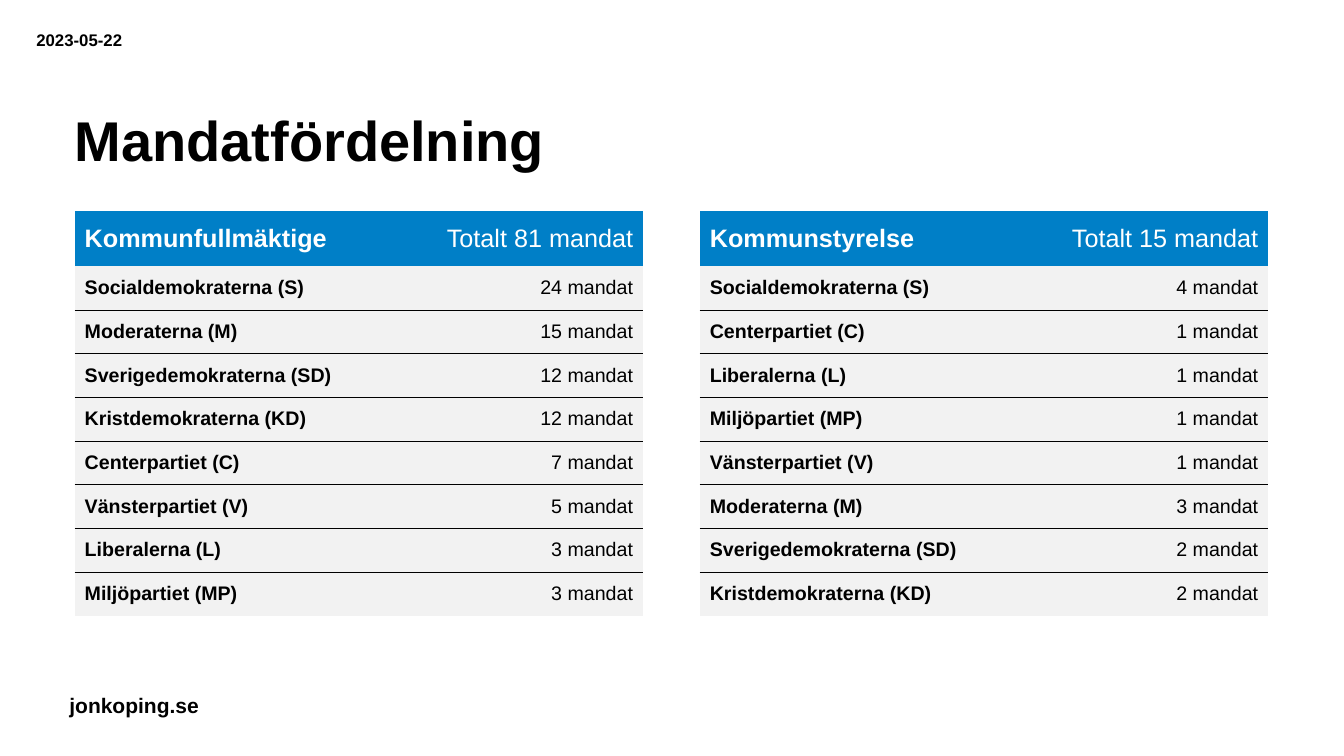
"""Build the slide on seat distribution in the municipal council and board."""
import lxml.etree
import pptx
import pptx.dml.color
import pptx.enum.text
import pptx.oxml.ns
import pptx.util

Inches = pptx.util.Inches
Align = pptx.enum.text.PP_ALIGN
Anchor = pptx.enum.text.MSO_ANCHOR


def colour(value):
    return pptx.dml.color.RGBColor.from_string(value)


def write(para, text, size, bold=True, ink="000000", align=Align.LEFT):
    para.alignment = align
    span = para.add_run()
    span.text = text
    span.font.name = "Arial"
    span.font.size = pptx.util.Pt(size)
    span.font.bold = bold
    span.font.color.rgb = colour(ink)


deck = pptx.Presentation()
deck.slide_width = Inches(13.33)
deck.slide_height = Inches(7.5)
page = deck.slides.add_slide(deck.slide_layouts[5])

title = page.shapes.title
title.left, title.top = Inches(0.74), Inches(0.5)
title.width, title.height = Inches(11.84), Inches(1.22)
frame = title.text_frame
frame.margin_left = frame.margin_right = frame.margin_top = frame.margin_bottom = 0
frame.vertical_anchor = Anchor.BOTTOM
frame.word_wrap = True
frame.auto_size = pptx.enum.text.MSO_AUTO_SIZE.NONE
frame.paragraphs[0].line_spacing = 0.9
write(frame.paragraphs[0], "Mandatfördelning", 40)

date_box = page.shapes.add_textbox(Inches(0.36), Inches(0.3), Inches(0.98), Inches(0.2))
frame = date_box.text_frame
frame.margin_left = frame.margin_right = frame.margin_top = frame.margin_bottom = 0
frame.word_wrap = True
write(frame.paragraphs[0], "2023-05-22", 12)

site_box = page.shapes.add_textbox(Inches(0.59), Inches(6.82), Inches(1.5), Inches(0.35))
site_box.text_frame.word_wrap = False
write(site_box.text_frame.paragraphs[0], "jonkoping.se", 15)

assemblies = [
    (0.74, "Kommunfullmäktige", [
        ("Socialdemokraterna (S)", 24), ("Moderaterna (M)", 15),
        ("Sverigedemokraterna (SD)", 12), ("Kristdemokraterna (KD)", 12),
        ("Centerpartiet (C)", 7), ("Vänsterpartiet (V)", 5),
        ("Liberalerna (L)", 3), ("Miljöpartiet (MP)", 3)]),
    (6.94, "Kommunstyrelse", [
        ("Socialdemokraterna (S)", 4), ("Centerpartiet (C)", 1),
        ("Liberalerna (L)", 1), ("Miljöpartiet (MP)", 1),
        ("Vänsterpartiet (V)", 1), ("Moderaterna (M)", 3),
        ("Sverigedemokraterna (SD)", 2), ("Kristdemokraterna (KD)", 2)]),
]

for left, assembly, parties in assemblies:
    total = sum(seats for party, seats in parties)
    rows = [(assembly, f"Totalt {total} mandat")]
    rows += [(party, f"{seats} mandat") for party, seats in parties]
    last = len(rows) - 1
    table = page.shapes.add_table(
        len(rows), 2, Inches(left), Inches(2.09), Inches(5.64), Inches(4.02)).table
    table.horz_banding = False
    table.columns[0].width = Inches(3.47)
    table.columns[1].width = Inches(2.17)
    for row, texts in enumerate(rows):
        header = row == 0
        table.rows[row].height = Inches(0.55) if header else Inches(3.47 / last)
        ruled = {"lnT": row > 1, "lnB": 0 < row < last}
        for column, text in enumerate(texts):
            cell = table.cell(row, column)
            cell.vertical_anchor = Anchor.MIDDLE
            properties = cell._tc.get_or_add_tcPr()
            for side in ("lnL", "lnR", "lnT", "lnB"):
                border = lxml.etree.SubElement(
                    properties, pptx.oxml.ns.qn("a:" + side), w="6350")
                if ruled.get(side):
                    fill = lxml.etree.SubElement(border, pptx.oxml.ns.qn("a:solidFill"))
                    lxml.etree.SubElement(fill, pptx.oxml.ns.qn("a:srgbClr"), val="000000")
                else:
                    lxml.etree.SubElement(border, pptx.oxml.ns.qn("a:noFill"))
            cell.fill.solid()
            cell.fill.fore_color.rgb = colour("007FC7" if header else "F2F2F2")
            write(cell.text_frame.paragraphs[0], text, 18 if header else 14,
                  bold=column == 0, ink="FFFFFF" if header else "000000",
                  align=Align.RIGHT if column else Align.LEFT)

deck.save("out.pptx")
